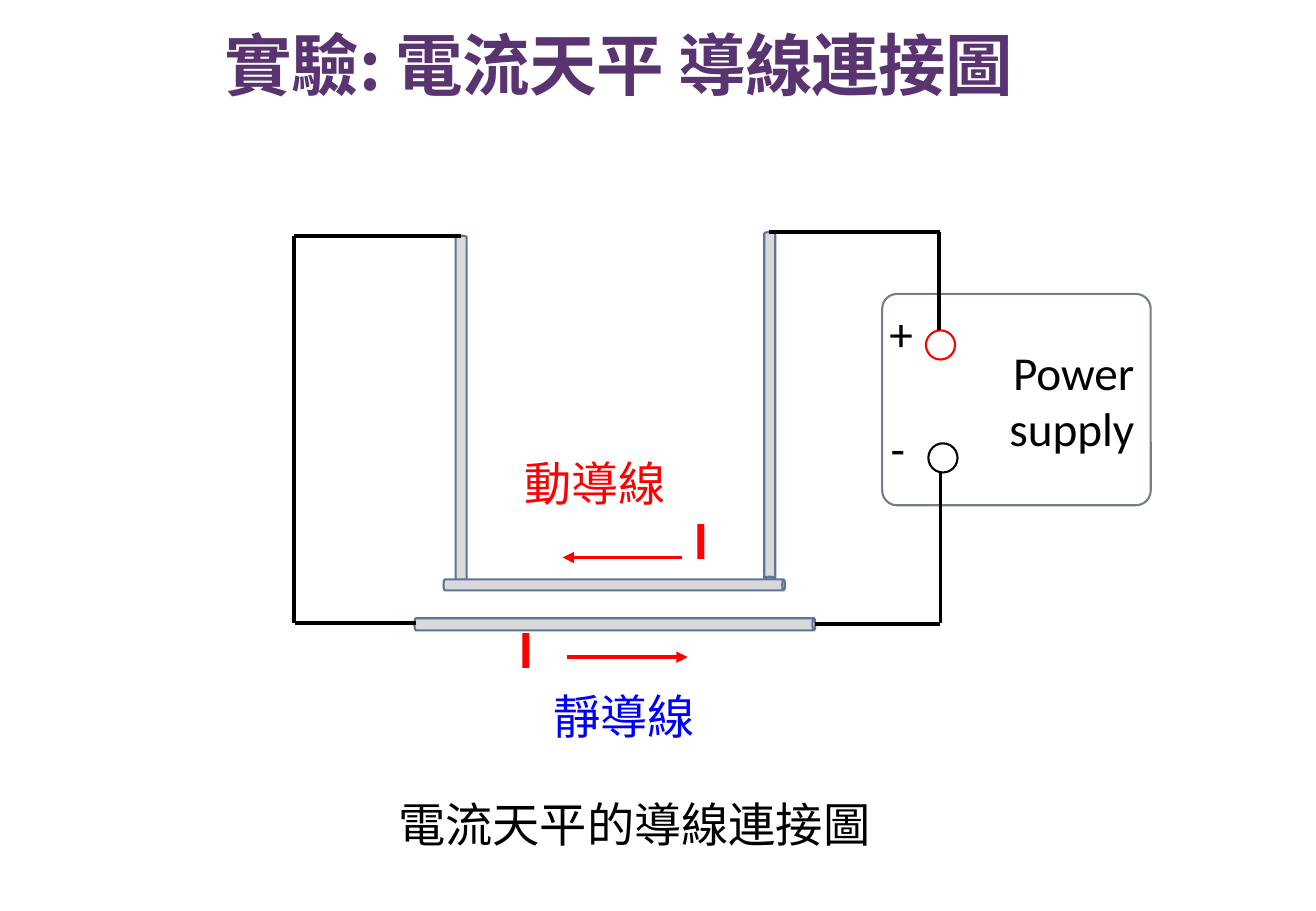
from pptx import Presentation, util as u
from pptx.dml.color import RGBColor
from pptx.enum import shapes, text
from pptx.oxml.ns import qn
from lxml import etree

BLACK = RGBColor(0, 0, 0)
WHITE = RGBColor(255, 255, 255)
RED = RGBColor(255, 0, 0)
BLUE = RGBColor(0, 0, 255)
PLUM = RGBColor(0x5A, 0x34, 0x71)
GREY = RGBColor(0xD9, 0xD9, 0xD9)
STEEL = RGBColor(0x5D, 0x73, 0x9A)
SLATE = RGBColor(0x6F, 0x81, 0x83)

SCALE = 9144
SC = "Noto Sans CJK SC"
TC = "Noto Sans CJK TC"
LATIN = "Calibri"
KIND = shapes.MSO_SHAPE
LEFT = text.PP_ALIGN.LEFT
RIGHT = text.PP_ALIGN.RIGHT
TOP = text.MSO_ANCHOR.TOP
MID = text.MSO_ANCHOR.MIDDLE


def px(*vals):
    return [u.Emu(v * SCALE) for v in vals]


class Board:
    """Draws the wiring diagram on one slide in a shared style."""

    def __init__(self, wide, high):
        self.deck = Presentation()
        self.deck.slide_width, self.deck.slide_height = px(wide, high)
        self.slide = self.deck.slides.add_slide(self.deck.slide_layouts[5])
        self.items = self.slide.shapes

    def fill_in(self, shape, words, face, color, size=28, bold=False,
                align=LEFT, anchor=TOP):
        frame = shape.text_frame
        frame.word_wrap = True
        frame.auto_size = text.MSO_AUTO_SIZE.NONE
        frame.vertical_anchor = anchor
        para = frame.paragraphs[0]
        para.alignment = align
        run = para.add_run()
        run.text = words
        font = run.font
        font.name, font.size, font.bold = face, u.Pt(size), bold
        font.color.rgb = color
        east = etree.SubElement(run._r.get_or_add_rPr(), qn("a:ea"))
        east.set("typeface", face)
        return run

    def title(self, box, words):
        head = self.items.title
        head.left, head.top, head.width, head.height = px(*box)
        run = self.fill_in(head, words, SC, PLUM, 40, True, anchor=MID)
        run._r.get_or_add_rPr().set("spc", "-30")

    def shape(self, kind, box, fill=None, line=None, turn=0):
        item = self.items.add_shape(kind, *px(*box))
        item.shadow.inherit = False
        item.rotation = turn
        if fill is None:
            item.fill.background()
        else:
            item.fill.solid()
            item.fill.fore_color.rgb = fill
        if line is None:
            item.line.fill.background()
        else:
            item.line.color.rgb = line
            item.line.width = u.Pt(1.25)
        return item

    def rod(self, box, turn):
        self.shape(KIND.CAN, box, GREY, STEEL, turn)

    def label(self, box, words, face, color, fill=None, bold=False):
        item = self.shape(KIND.ROUNDED_RECTANGLE, box, fill)
        self.fill_in(item, words, face, color, bold=bold)

    def note(self, box, words):
        self.fill_in(self.items.add_textbox(*px(*box)), words, LATIN, BLACK)

    def wire(self, ends, color=BLACK, arrow=False):
        item = self.items.add_connector(shapes.MSO_CONNECTOR.STRAIGHT, *px(*ends))
        item.line.color.rgb = color
        item.line.width = u.Pt(2.25)
        props = item._element.spPr
        if arrow:
            tip = etree.SubElement(props.find(qn("a:ln")), qn("a:tailEnd"))
            tip.set("type", "triangle")
        etree.SubElement(props, qn("a:effectLst"))

    def supply(self, box):
        item = self.shape(KIND.ROUNDED_RECTANGLE, box, WHITE, SLATE)
        item.adjustments[0] = 0.07
        self.fill_in(item, "Power supply", LATIN, BLACK, align=RIGHT, anchor=MID)


def main():
    board = Board(1083, 750)
    board.title((175, 14, 720, 77), "實驗: 電流天平 導線連接圖")

    for box, turn in (((375, 194, 9, 286), 180), ((629, 191, 9, 286), 180),
                      ((501, 341, 9, 281), 90), ((501, 349, 10, 330), 90)):
        board.rod(box, turn)

    board.label((442, 557, 172, 77), "靜導線", SC, BLUE, WHITE)
    board.label((418, 365, 172, 77), "動導線", SC, RED)

    board.supply((726, 242, 221, 174))
    board.shape(KIND.OVAL, (762, 272, 24, 24), line=RED)
    board.shape(KIND.OVAL, (764, 365, 24, 24), line=BLACK)

    for ends in ((633, 191, 774, 191), (773, 191, 773, 272),
                 (774, 389, 774, 513), (671, 514, 774, 514),
                 (243, 513, 342, 513), (242, 194, 379, 194),
                 (242, 194, 242, 513)):
        board.wire(ends)

    board.note((722, 246, 48, 70), "+")
    board.note((723, 340, 39, 70), "-")

    for ends in ((561, 459, 463, 459), (467, 541, 566, 541)):
        board.wire(ends, RED, arrow=True)
    for left, top in ((558, 414), (414, 504)):
        board.label((left, top, 53, 75), "I", TC, RED, bold=True)

    board.note((318, 650, 494, 70), "電流天平的導線連接圖")
    board.deck.save("out.pptx")


if __name__ == "__main__":
    main()
